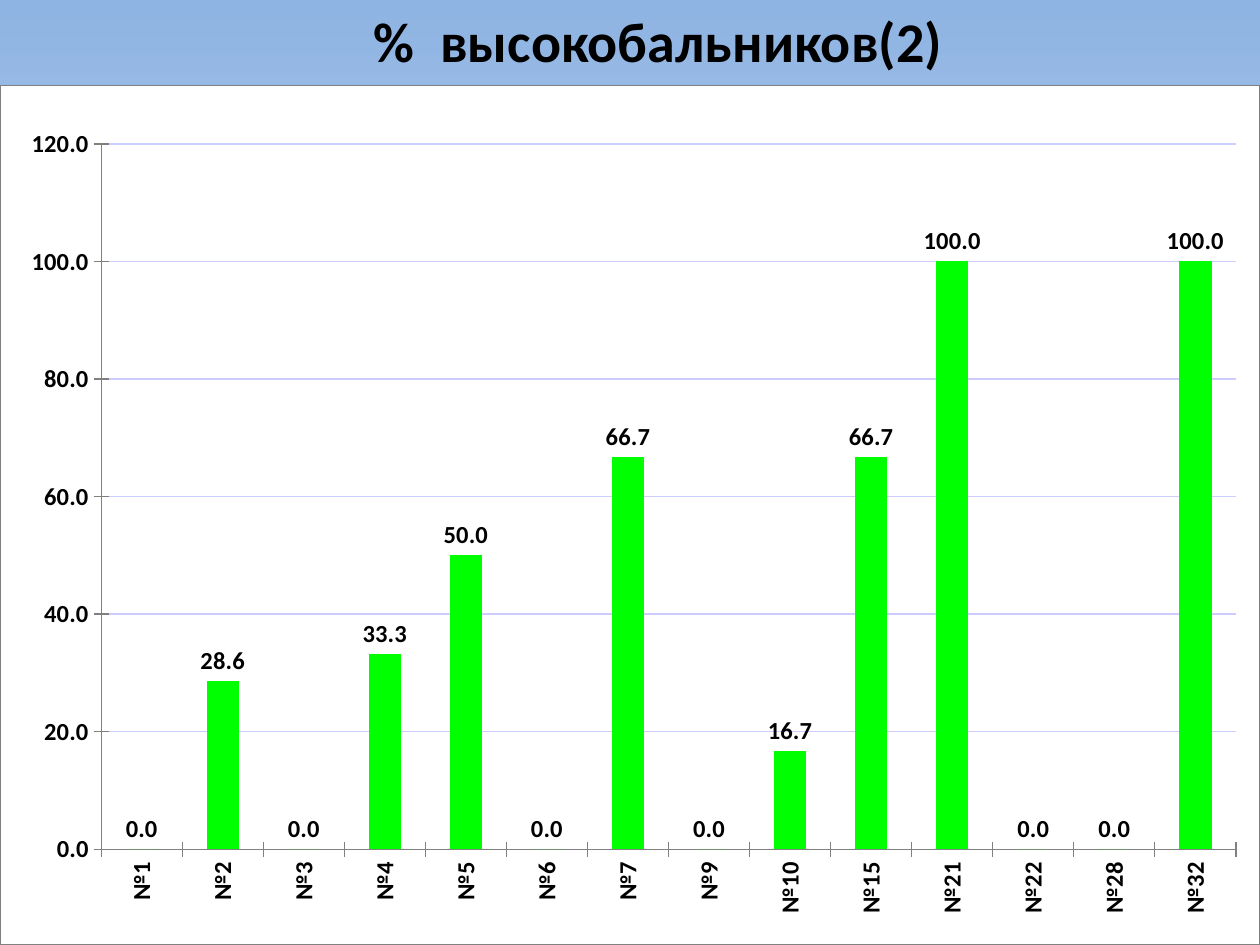
"""Build a slide with a column chart of the share of high scorers by school."""
from dataclasses import dataclass
from typing import NamedTuple

from lxml.etree import SubElement
from pptx import Presentation
from pptx.chart.data import CategoryChartData
from pptx.dml.color import RGBColor
from pptx.enum.chart import XL_CHART_TYPE, XL_LABEL_POSITION, XL_TICK_MARK
from pptx.enum.text import MSO_ANCHOR, MSO_AUTO_SIZE
from pptx.oxml import parse_xml
from pptx.oxml.ns import nsdecls, qn
from pptx.util import Cm, Pt


@dataclass(frozen=True)
class Theme:
    font: str = "Calibri"
    ink: str = "000000"
    bar: str = "00FF00"
    paper: str = "FFFFFF"
    axis: str = "808080"
    grid: str = "CCCCFF"
    sky: tuple = ((0, "8EB4E3"), (50, "C2D1ED"), (100, "E1E8F5"))
    heading_size: int = 32
    label_size: int = 14
    chart_size: int = 10


class Box(NamedTuple):
    left: float
    top: float
    width: float
    height: float

    def lengths(self) -> tuple:
        return tuple(Cm(value) for value in self)


class School(NamedTuple):
    name: str
    percent: float


THEME = Theme()
HEADING_BOX = Box(7.29, 0, 12.09, 1.63)
CHART_BOX = Box(0, 1.73, 25.4, 17.32)
PLOT = {"x": 0.025, "y": 0.05, "w": 0.956, "h": 0.913}
SCHOOLS = (
    School("№1", 0), School("№2", 28.6), School("№3", 0), School("№4", 33.3),
    School("№5", 50), School("№6", 0), School("№7", 66.7), School("№9", 0),
    School("№10", 16.7), School("№15", 66.7), School("№21", 100),
    School("№22", 0), School("№28", 0), School("№32", 100),
)


def style_font(font, size: int, bold: bool = True) -> None:
    font.name = THEME.font
    font.size = Pt(size)
    font.bold = bold
    font.color.rgb = RGBColor.from_string(THEME.ink)


def style_line(line, color: str) -> None:
    line.color.rgb = RGBColor.from_string(color)
    line.width = Pt(0)


def add_text(slide, box: Box, text: str, *, size: int, bold: bool = True) -> None:
    frame = slide.shapes.add_textbox(*box.lengths()).text_frame
    frame.word_wrap = False
    frame.auto_size = MSO_AUTO_SIZE.SHAPE_TO_FIT_TEXT
    frame.vertical_anchor = MSO_ANCHOR.TOP
    run = frame.paragraphs[0].add_run()
    run.text = text
    style_font(run.font, size, bold)


def paint_background(slide) -> None:
    fill = slide.background.fill
    fill.gradient()
    fill.gradient_angle = 270
    stops = slide.element.find(".//" + qn("a:gsLst"))
    for stop in list(stops):
        stops.remove(stop)
    for position, color in THEME.sky:
        stop = SubElement(stops, qn("a:gs"), pos=str(position * 1000))
        SubElement(stop, qn("a:srgbClr"), val=color)


def style_axis(axis) -> None:
    axis.major_tick_mark = XL_TICK_MARK.CROSS
    style_line(axis.format.line, THEME.axis)
    style_font(axis.tick_labels.font, THEME.label_size)


def frame_chart(chart) -> None:
    chart.element.find(qn("c:chart")).addnext(parse_xml(
        f'<c:spPr {nsdecls("c", "a")}>'
        f'<a:solidFill><a:srgbClr val="{THEME.paper}"/></a:solidFill>'
        f'<a:ln w="0"><a:solidFill><a:srgbClr val="{THEME.axis}"/></a:solidFill></a:ln>'
        '</c:spPr>'))
    plot_area = chart.element.find(".//" + qn("c:plotArea"))
    for layout in plot_area.findall(qn("c:layout")):
        plot_area.remove(layout)
    modes = "".join(f'<c:{side}Mode val="edge"/>' for side in "xy")
    sides = "".join(f'<c:{side} val="{share}"/>' for side, share in PLOT.items())
    plot_area.insert(0, parse_xml(
        f'<c:layout {nsdecls("c")}><c:manualLayout><c:layoutTarget val="outer"/>'
        f'{modes}{sides}</c:manualLayout></c:layout>'))


def add_school_chart(slide, box: Box, schools: tuple[School, ...]) -> None:
    data = CategoryChartData(number_format="0.0")
    data.categories = [school.name for school in schools]
    data.add_series("Series 1", [school.percent for school in schools])
    chart = slide.shapes.add_chart(
        XL_CHART_TYPE.COLUMN_CLUSTERED, *box.lengths(), data).chart
    chart.has_legend = False
    chart.has_title = False
    style_font(chart.font, THEME.chart_size, bold=False)
    frame_chart(chart)

    schools_axis, percent_axis = chart.category_axis, chart.value_axis
    for axis in (schools_axis, percent_axis):
        style_axis(axis)
    turn = schools_axis._element.find(qn("c:txPr")).find(qn("a:bodyPr"))
    turn.set("rot", "-5400000")
    turn.set("vert", "horz")
    percent_axis.minimum_scale, percent_axis.maximum_scale = 0, 120
    percent_axis.major_unit = 20
    percent_axis.tick_labels.number_format = "0.0"
    percent_axis.tick_labels.number_format_is_linked = False
    style_line(percent_axis.major_gridlines.format.line, THEME.grid)

    columns = chart.plots[0]
    columns.gap_width = 150
    columns.vary_by_categories = False
    percents = columns.series[0]
    percents.format.fill.solid()
    percents.format.fill.fore_color.rgb = RGBColor.from_string(THEME.bar)
    percents.format.line.fill.background()
    values = percents.data_labels
    values.show_value = True
    values.number_format = "0.0"
    values.number_format_is_linked = False
    values.position = XL_LABEL_POSITION.OUTSIDE_END
    style_font(values.font, THEME.label_size)


def main() -> None:
    deck = Presentation()
    deck.slide_width, deck.slide_height = Cm(25.4), Cm(19.05)
    slide = deck.slides.add_slide(deck.slide_layouts[6])
    paint_background(slide)
    add_text(slide, HEADING_BOX, "%  высокобальников(2)", size=THEME.heading_size)
    add_school_chart(slide, CHART_BOX, SCHOOLS)
    deck.save("out.pptx")


if __name__ == "__main__":
    main()
